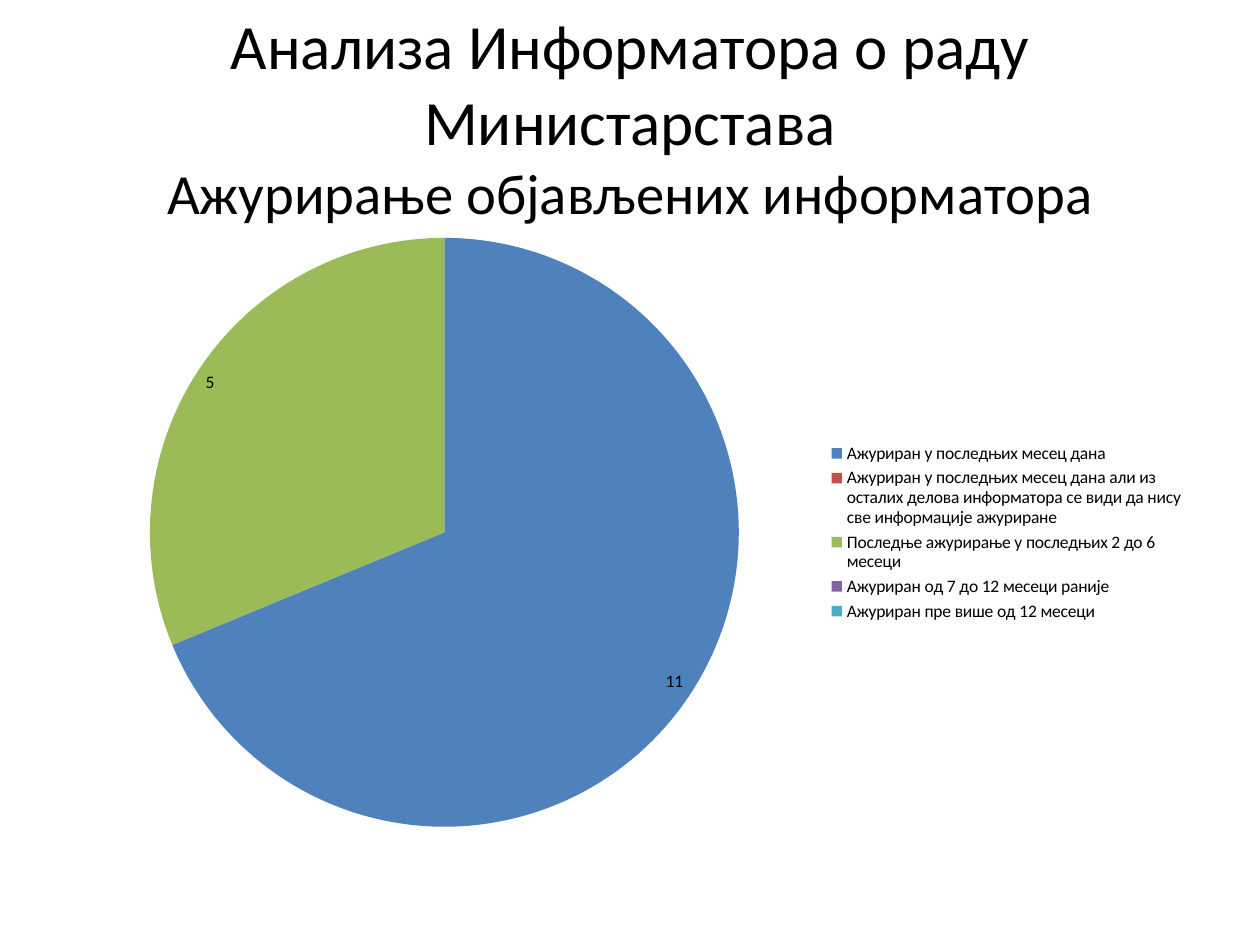
from pptx import Presentation
from pptx.chart.data import CategoryChartData
from pptx.dml.color import RGBColor
from pptx.enum import chart as ch, text as tx
from pptx.util import Pt

FONT = "Calibri"
BLACK = RGBColor(0, 0, 0)
BLUE = RGBColor(0x4F, 0x81, 0xBD)
RED = RGBColor(0xC0, 0x50, 0x4D)
GREEN = RGBColor(0x9B, 0xBB, 0x59)
PURPLE = RGBColor(0x80, 0x64, 0xA2)
TEAL = RGBColor(0x4B, 0xAC, 0xC6)

SLICES = [
    ("Ажуриран у последњих месец дана", 11, BLUE),
    ("Ажуриран у последњих месец дана али из осталих делова "
     "информатора се види да нису све информације ажуриране", 0, RED),
    ("Последње ажурирање у последњих 2 до 6 месеци", 5, GREEN),
    ("Ажуриран од 7 до 12 месеци раније", 0, PURPLE),
    ("Ажуриран пре више од 12 месеци", 0, TEAL),
]


def style(font, size):
    font.name = FONT
    font.size = Pt(size)
    font.color.rgb = BLACK


def add_run(para, words, size):
    run = para.add_run()
    run.text = words
    style(run.font, size)


def add_title(slide):
    box = slide.shapes.add_textbox(Pt(36), Pt(21.6), Pt(648), Pt(90))
    frame = box.text_frame
    frame.word_wrap = True
    frame.vertical_anchor = tx.MSO_ANCHOR.MIDDLE
    para = frame.paragraphs[0]
    para.alignment = tx.PP_ALIGN.CENTER
    add_run(para, "Анализа Информатора о раду Министарстава", 36)
    para.add_line_break()
    add_run(para, "Ажурирање објављених информатора", 32.4)


def add_pie(slide):
    names, counts, colors = zip(*SLICES)
    data = CategoryChartData()
    data.categories = names
    data.add_series("Series 1", counts)
    chart = slide.shapes.add_chart(
        ch.XL_CHART_TYPE.PIE, Pt(36), Pt(126), Pt(648), Pt(356.4), data
    ).chart
    style(chart.font, 10)
    chart.has_title = False
    chart.has_legend = True
    chart.legend.position = ch.XL_LEGEND_POSITION.RIGHT
    chart.legend.include_in_layout = False

    plot = chart.plots[0]
    plot.vary_by_categories = True
    for i, color in enumerate(colors):
        fill = plot.series[0].points[i].format.fill
        fill.solid()
        fill.fore_color.rgb = color

    plot.has_data_labels = True
    labels = plot.data_labels
    labels.show_value = True
    labels.show_percentage = False
    labels.number_format = "0;;;"
    labels.number_format_is_linked = False
    labels.position = ch.XL_LABEL_POSITION.INSIDE_END
    style(labels.font, 10)


def main():
    deck = Presentation()
    deck.slide_width, deck.slide_height = Pt(720), Pt(540)
    slide = deck.slides.add_slide(deck.slide_layouts[6])
    add_title(slide)
    add_pie(slide)
    deck.save("out.pptx")


if __name__ == "__main__":
    main()
